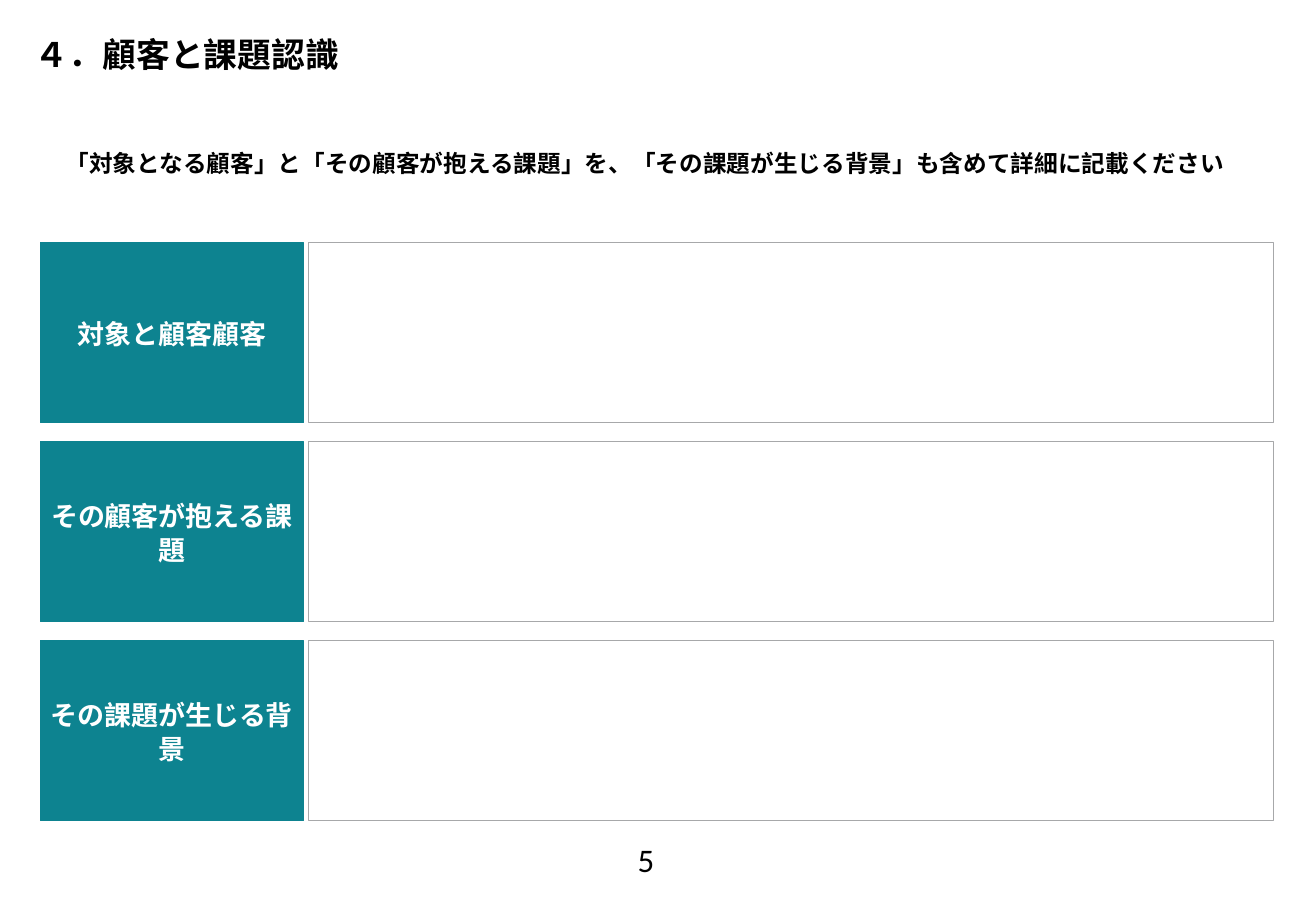
from pptx import Presentation
from pptx.dml.color import RGBColor
from pptx.enum.shapes import MSO_SHAPE
from pptx.enum.text import MSO_ANCHOR, PP_ALIGN
from pptx.util import Cm, Pt

RECTANGLE = MSO_SHAPE.RECTANGLE
TOP, MIDDLE = MSO_ANCHOR.TOP, MSO_ANCHOR.MIDDLE
LEFT, CENTER = PP_ALIGN.LEFT, PP_ALIGN.CENTER
COLORS = {"text": "000000", "label": "0D8390", "white": "FFFFFF", "border": "A7A8AA"}


def add_panel(page, left, top, width, fill, line):
    panel = page.shapes.add_shape(RECTANGLE, Cm(left), Cm(top), Cm(width), Cm(3.76))
    panel.shadow.inherit = False
    panel.fill.solid()
    panel.fill.fore_color.rgb = RGBColor.from_string(COLORS[fill])
    panel.line.color.rgb = RGBColor.from_string(COLORS[line])
    panel.line.width = Pt(0.5)
    return panel


def write_text(box, text, size, font, color, bold, anchor, align, margins):
    frame = box.text_frame
    frame.word_wrap = True
    frame.vertical_anchor = anchor
    frame.margin_left, frame.margin_top, frame.margin_right, frame.margin_bottom = map(Cm, margins)
    para = frame.paragraphs[0]
    para.text = text
    para.alignment = align
    para.font.size = Pt(size)
    para.font.name = font
    para.font.bold = bold
    para.font.color.rgb = RGBColor.from_string(COLORS[color])
    return para


deck = Presentation()
deck.slide_width, deck.slide_height = Cm(27.51), Cm(19.05)
page = deck.slides.add_slide(deck.slide_layouts[5])

# Title
title = page.shapes.title
title.left, title.top, title.width, title.height = Cm(0.48), Cm(0.58), Cm(25.2), Cm(1.7)
write_text(title, "４．顧客と課題認識", 20, "Calibri", "text", True, TOP, LEFT,
           (0.25, 0.13, 0.25, 0.13))

# Instruction
instruction = page.shapes.add_textbox(Cm(1.17), Cm(2.82), Cm(25.6), Cm(1.19))
write_text(instruction,
           "「対象となる顧客」と「その顧客が抱える課題」を、「その課題が生じる背景」も含めて詳細に記載ください",
           14, "Calibri", "text", True, MIDDLE, LEFT, (0.2, 0, 0, 0))

# Rows: a label and an empty answer field
for row, label in enumerate(["対象と顧客顧客", "その顧客が抱える課題", "その課題が生じる背景"]):
    top = 5.08 + row * 4.16
    heading = add_panel(page, 0.84, top, 5.51, "label", "label")
    para = write_text(heading, label, 16, "Arial", "white", True, MIDDLE, CENTER,
                      (0.2, 0.2, 0.2, 0.2))
    para.line_spacing = 1.06
    add_panel(page, 6.45, top, 20.17, "white", "border")

# Page number
number = page.shapes.add_textbox(Cm(13.08), Cm(17.55), Cm(2.11), Cm(0.84))
write_text(number, "5", 19.5, "Calibri", "text", False, TOP, LEFT, (0.25, 0, 0.25, 0))

deck.save("out.pptx")
